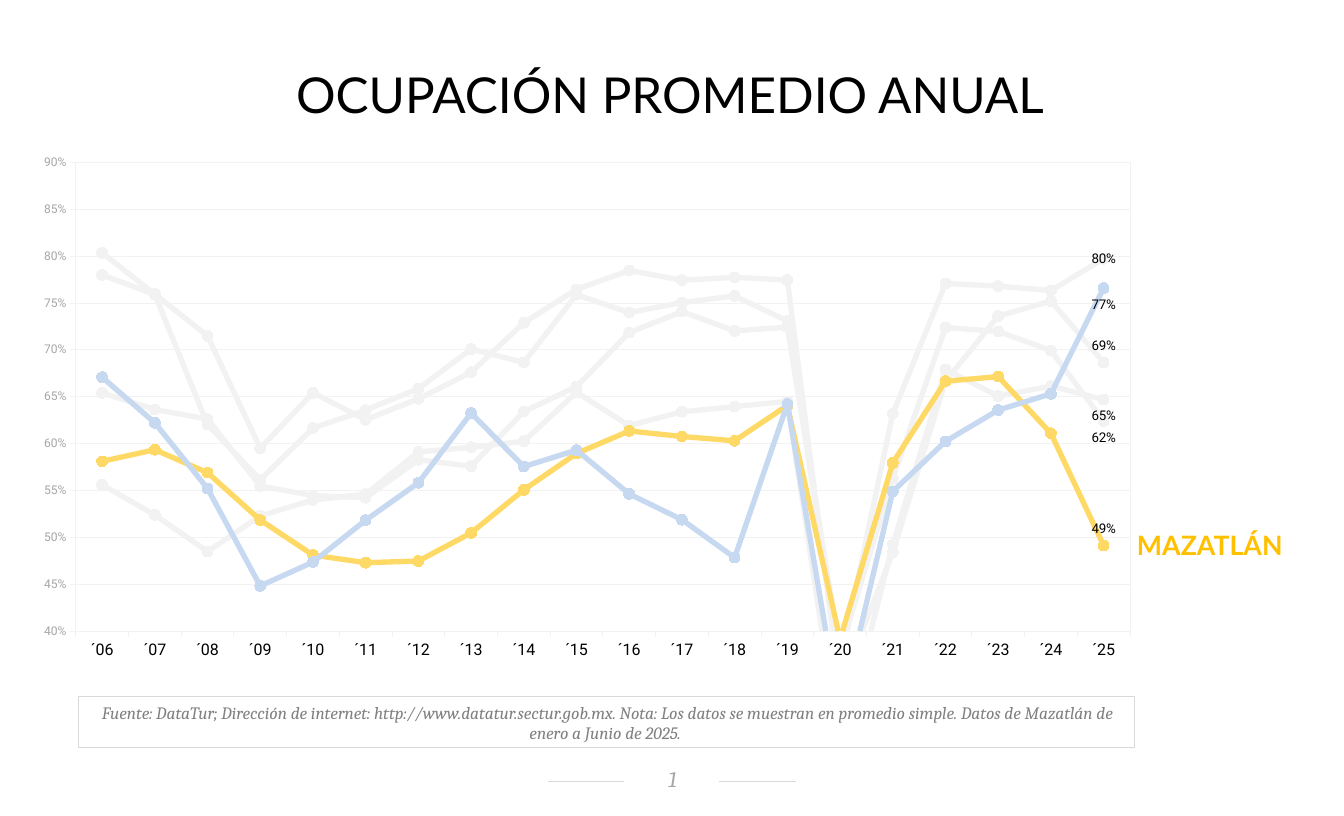
from lxml.etree import SubElement, fromstring
from pptx import Presentation
from pptx.chart.data import CategoryChartData
from pptx.dml.color import RGBColor
from pptx.enum.chart import XL_CHART_TYPE, XL_LABEL_POSITION, XL_MARKER_STYLE, XL_TICK_MARK
from pptx.enum.shapes import MSO_CONNECTOR, MSO_SHAPE
from pptx.enum.text import MSO_ANCHOR, PP_ALIGN
from pptx.oxml.ns import qn
from pptx.util import Pt

PX = 9525  # EMU per pixel
COLORS = {
    "black": "000000", "white": "FFFFFF", "pale": "F2F2F2", "rule": "D9D9D9",
    "muted": "A6A6A6", "source": "808080", "gold": "FFC000",
    "mazatlan": "FFD966", "blue": "C6D9F1",
}
YEARS = [f"´{year:02d}" for year in range(6, 26)]

# Colour, position of the last label, yearly occupancy
SERIES = [
    ("pale", XL_LABEL_POSITION.ABOVE,
     [0.8036, 0.7596, 0.715, 0.595, 0.6543, 0.6255, 0.6479, 0.6762, 0.729, 0.7647,
      0.7849, 0.7745, 0.7775, 0.7747, 0.3383, 0.4839, 0.6667, 0.7361, 0.7522, 0.6867]),
    ("pale", XL_LABEL_POSITION.CENTER,
     [0.7801, 0.7592, 0.6203, 0.5614, 0.6166, 0.6357, 0.6588, 0.7009, 0.6867, 0.759,
      0.7399, 0.7506, 0.7576, 0.731, 0.3655, 0.632, 0.7709, 0.7682, 0.7634, 0.7974]),
    ("pale", XL_LABEL_POSITION.BELOW,
     [0.6542, 0.6364, 0.6262, 0.5547, 0.5446, 0.5423, 0.5828, 0.5759, 0.6341, 0.6609,
      0.7186, 0.7409, 0.7203, 0.7244, 0.3779, 0.5629, 0.724, 0.7198, 0.6993, 0.6241]),
    ("pale", XL_LABEL_POSITION.BELOW,
     [0.5561, 0.5239, 0.4848, 0.5229, 0.5398, 0.546, 0.5912, 0.5961, 0.6025, 0.6547,
      0.6193, 0.634, 0.6395, 0.6451, 0.2713, 0.4923, 0.6792, 0.6508, 0.6614, 0.6471]),
    ("mazatlan", XL_LABEL_POSITION.ABOVE,
     [0.5811, 0.5935, 0.569, 0.5184, 0.4811, 0.4729, 0.4747, 0.5047, 0.5507, 0.5895,
      0.6135, 0.6076, 0.603, 0.6408, 0.3912, 0.5795, 0.6666, 0.6716, 0.611, 0.4913]),
    ("blue", XL_LABEL_POSITION.BELOW,
     [0.6709, 0.6222, 0.5521, 0.4481, 0.4736, 0.5183, 0.5582, 0.6326, 0.5755, 0.5931,
      0.5463, 0.5188, 0.4783, 0.6422, 0.3105, 0.549, 0.6024, 0.6358, 0.6532, 0.766]),
]


def px(*lengths):
    return [length * PX for length in lengths]


def rgb(name):
    return RGBColor.from_string(COLORS[name])


def style_font(font, face, size, color, bold=False, italic=False):
    font.name, font.size, font.bold, font.italic = face, Pt(size), bold, italic
    font.color.rgb = rgb(color)


def style_line(line, color, width=0.75):
    line.color.rgb = rgb(color)
    line.width = Pt(width)


def set_frame(frame, insets, anchor=MSO_ANCHOR.MIDDLE):
    frame.word_wrap = True
    frame.vertical_anchor = anchor
    (frame.margin_left, frame.margin_top,
     frame.margin_right, frame.margin_bottom) = px(*insets)


def add_title(page, text):
    title = page.shapes.title
    title.left, title.top, title.width, title.height = px(49, 69, 1242, 62)
    title.text = text
    set_frame(title.text_frame, (12, 6, 12, 6), MSO_ANCHOR.TOP)
    para = title.text_frame.paragraphs[0]
    para.alignment, para.line_spacing = PP_ALIGN.CENTER, 0.8
    style_font(para.font, "Lato", 37.1, "black")


def add_rule(page, left, top, right):
    rule = page.shapes.add_connector(MSO_CONNECTOR.STRAIGHT, *px(left, top, right, top))
    style_line(rule.line, "rule")
    SubElement(rule._element.spPr, qn("a:effectLst"))


def add_box(page, place, text, size, color, insets, fill=None, border=None):
    box = page.shapes.add_shape(MSO_SHAPE.RECTANGLE, *px(*place))
    box.shadow.inherit = False
    if fill:
        box.fill.solid()
        box.fill.fore_color.rgb = rgb(fill)
    else:
        box.fill.background()
    if border:
        style_line(box.line, border)
    else:
        box.line.fill.background()
    set_frame(box.text_frame, insets)
    para = box.text_frame.paragraphs[0]
    para.text, para.alignment = text, PP_ALIGN.CENTER
    style_font(para.font, "Cambria", size, color, italic=True)


def add_label(page, place, text):
    box = page.shapes.add_textbox(*px(*place))
    set_frame(box.text_frame, (12, 6, 12, 6))
    para = box.text_frame.paragraphs[0]
    para.text = text
    style_font(para.font, "Lato", 20, "gold", bold=True)


def style_axis(axis, size, color):
    axis.major_tick_mark = XL_TICK_MARK.OUTSIDE
    axis.minor_tick_mark = XL_TICK_MARK.NONE
    style_line(axis.format.line, "pale")
    style_font(axis.tick_labels.font, "Roboto", size, color)


def style_series(series, color, position):
    series.smooth = False
    style_line(series.format.line, color, 4)
    marker = series.marker
    marker.style, marker.size = XL_MARKER_STYLE.CIRCLE, 8
    marker.format.fill.solid()
    marker.format.fill.fore_color.rgb = rgb(color)
    style_line(marker.format.line, color)
    # Only the last year is labelled
    label = series.points[len(YEARS) - 1].data_label
    style_font(label.font, "Roboto", 10, "black")
    label.position = position


def fix_plot_area(chart):
    namespace = "http://schemas.openxmlformats.org/drawingml/2006/"
    area = chart._chartSpace.chart.plotArea
    for old in area.findall(qn("c:layout")):
        area.remove(old)
    sides = "".join(f'<c:{tag} val="{value}"/>' for tag, value in (
        ("layoutTarget", "inner"), ("xMode", "edge"), ("yMode", "edge"),
        ("x", 0.067), ("y", 0.037), ("w", 0.92), ("h", 0.884)))
    area.insert(0, fromstring(
        f'<c:layout xmlns:c="{namespace}chart"><c:manualLayout>{sides}</c:manualLayout></c:layout>'))
    area.append(fromstring(
        f'<c:spPr xmlns:c="{namespace}chart" xmlns:a="{namespace}main"><a:noFill/>'
        f'<a:ln w="9525"><a:solidFill><a:srgbClr val="{COLORS["pale"]}"/></a:solidFill></a:ln></c:spPr>'))


def add_occupancy_chart(page):
    data = CategoryChartData(number_format="0%")
    data.categories = YEARS
    for number, (_, _, values) in enumerate(SERIES, 1):
        data.add_series(f"Series {number}", values)
    chart = page.shapes.add_chart(
        XL_CHART_TYPE.LINE_MARKERS, *px(-1, 143, 1146, 530), data).chart
    chart.has_legend = chart.has_title = False
    style_font(chart.font, "Calibri", 10, "black")
    chart.plots[0].vary_by_categories = False

    style_axis(chart.category_axis, 12, "black")
    axis = chart.value_axis
    style_axis(axis, 9, "muted")
    axis.minimum_scale, axis.maximum_scale, axis.major_unit = 0.4, 0.9, 0.05
    axis.tick_labels.number_format = "0%"
    axis.tick_labels.number_format_is_linked = False
    style_line(axis.major_gridlines.format.line, "pale")

    for series, (color, position, _) in zip(chart.plots[0].series, SERIES):
        style_series(series, color, position)
    fix_plot_area(chart)


def main():
    deck = Presentation()
    deck.slide_width, deck.slide_height = px(1344, 816)
    page = deck.slides.add_slide(deck.slide_layouts[5])

    # Page number on its rule
    add_rule(page, 548, 782, 796)
    add_box(page, (624, 766, 95, 28), "1", 16.7, "muted", (12, 2, 10, 5), fill="white")

    add_title(page, "OCUPACIÓN PROMEDIO ANUAL")

    # Chart and the highlighted destination
    add_occupancy_chart(page)
    add_label(page, (1125, 523, 219, 44), "MAZATLÁN")

    # Source note
    add_box(page, (79, 697, 1056, 51),
            "Fuente: DataTur; Dirección de internet: http://www.datatur.sectur.gob.mx. "
            "Nota: Los datos se muestran en promedio simple. "
            "Datos de Mazatlán de enero a Junio de 2025. ",
            13, "source", (10, 5, 10, 5), border="rule")
    deck.save("out.pptx")


if __name__ == "__main__":
    main()
